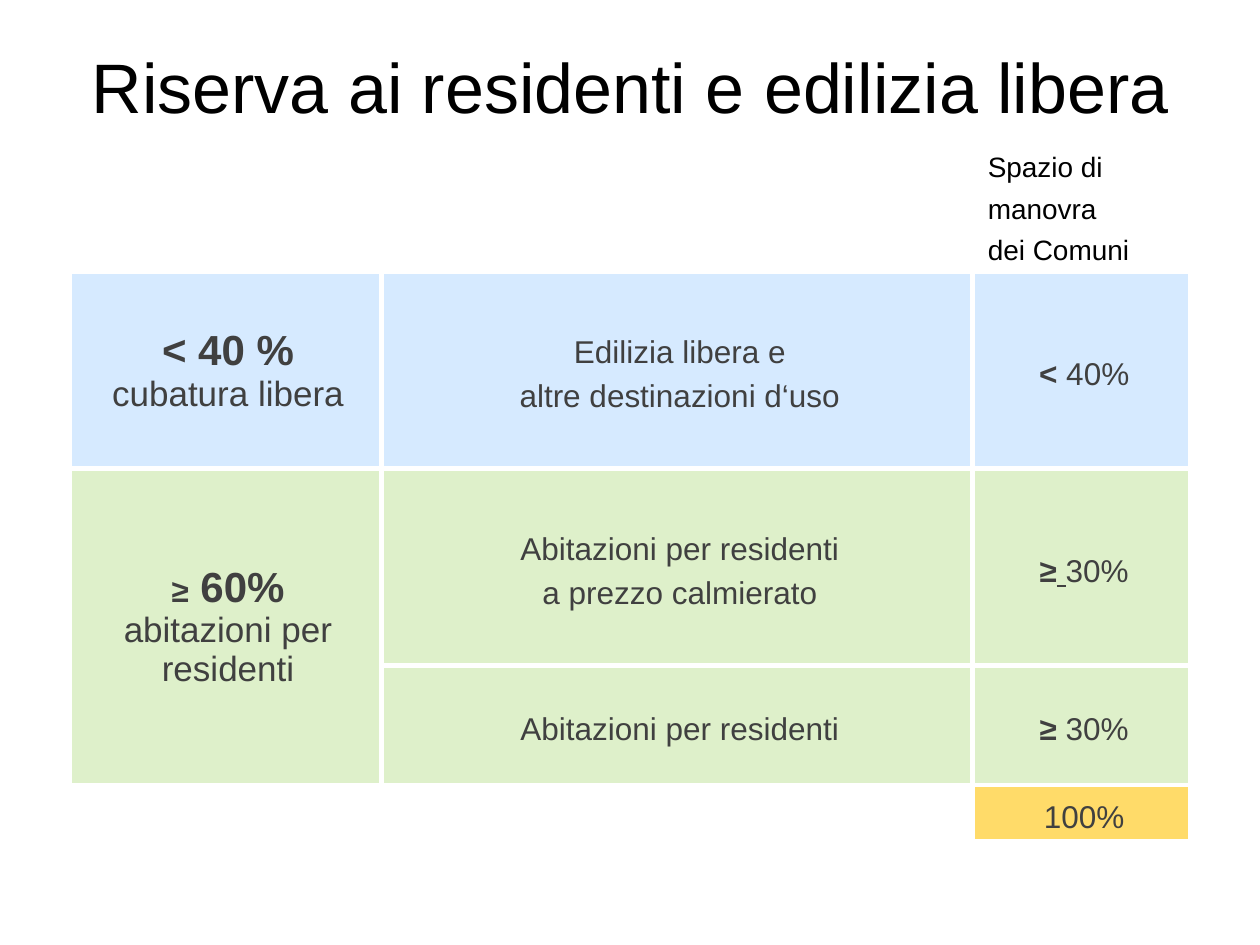
from dataclasses import dataclass
from itertools import product

from lxml.etree import SubElement
from pptx import Presentation
from pptx.dml.color import RGBColor
from pptx.enum.text import MSO_ANCHOR as Anchor, MSO_AUTO_SIZE as AutoSize, PP_ALIGN as Align
from pptx.oxml.ns import qn
from pptx.util import Inches, Pt


@dataclass(frozen=True)
class Theme:
    font: str = "Arial"
    black: str = "000000"
    grey: str = "404040"
    white: str = "FFFFFF"
    blue: tuple = ("99CCFF", 40)
    green: tuple = ("92D050", 30)
    clear: tuple = ("FFFFFF", 20)
    yellow: tuple = ("FFDB69", 100)
    title: int = 40
    share: int = 24
    label: int = 20
    cell: int = 18
    note: int = 16
    border: int = 3


THEME = Theme()
COLUMNS = (2.48, 4.69, 1.73)
ROWS = (1.56, 1.56, 0.95, 0.35)
TABLE_LEFT, TABLE_TOP = 0.55, 2.16

FILLS = (
    (THEME.blue,) * 3,
    (THEME.green,) * 3,
    (THEME.green,) * 3,
    (THEME.clear, THEME.clear, THEME.yellow),
)
SHARES = {
    (0, 0): [[("< 40 %", THEME.share, True)], [("cubatura libera", THEME.label, False)]],
    (1, 0): [
        [("≥", THEME.cell, True), (" 60%", THEME.share, True)],
        [("abitazioni per", THEME.label, False)],
        [("residenti", THEME.label, False)],
    ],
}
USES = {
    (0, 1): ["Edilizia libera e", "altre destinazioni d‘uso"],
    (1, 1): ["Abitazioni per residenti", "a prezzo calmierato"],
    (2, 1): ["Abitazioni per residenti"],
    (3, 2): ["100%"],
}
LIMITS = {
    (0, 2): [("< ", True, False), ("40%", False, False)],
    (1, 2): [("≥", True, False), (" ", True, True), ("30%", False, False)],
    (2, 2): [("≥", True, False), (" 30%", False, False)],
}


def add_text(paragraph, text, size=THEME.cell, color=THEME.grey, bold=False, underline=False):
    run = paragraph.add_run()
    run.text = text
    font = run.font
    font.name, font.size = THEME.font, Pt(size)
    font.bold, font.underline = bold, underline
    font.color.rgb = RGBColor.from_string(color)


def next_paragraph(frame, index, **settings):
    paragraph = frame.add_paragraph() if index else frame.paragraphs[0]
    for name, value in settings.items():
        setattr(paragraph, name, value)
    return paragraph


def place(shape, left, top, width, height):
    shape.left, shape.top = Inches(left), Inches(top)
    shape.width, shape.height = Inches(width), Inches(height)
    shape.text_frame.auto_size = AutoSize.NONE
    shape.text_frame.word_wrap = True


def fill_title(shape):
    place(shape, 0.5, 0.05, 9, 1.25)
    frame = shape.text_frame
    frame.vertical_anchor = Anchor.MIDDLE
    paragraph = next_paragraph(frame, 0, alignment=Align.CENTER)
    add_text(paragraph, "Riserva ai residenti e edilizia libera", THEME.title, THEME.black)


def fill_note(shape):
    place(shape, 0.5, 1.07, 9, 5.63)
    frame = shape.text_frame
    frame.margin_left, frame.margin_top = Inches(7.34), Inches(0.12)
    for index, line in enumerate(("Spazio di", "manovra", "dei Comuni")):
        paragraph = next_paragraph(frame, index, space_before=Pt(4.5 if index else 0))
        properties = paragraph._p.get_or_add_pPr()
        properties.set("marL", "0")
        properties.set("indent", "0")
        SubElement(properties, qn("a:buNone"))
        add_text(paragraph, line, THEME.note, THEME.black)


def style_cell(cell, color, opacity):
    properties = cell._tc.get_or_add_tcPr()
    for side in "LRTB":
        line = SubElement(properties, qn(f"a:ln{side}"), w=str(Pt(THEME.border)))
        SubElement(SubElement(line, qn("a:solidFill")), qn("a:srgbClr"), val=THEME.white)
    cell.fill.solid()
    cell.fill.fore_color.rgb = RGBColor.from_string(color)
    if opacity < 100:
        tint = properties.find(qn("a:solidFill")).find(qn("a:srgbClr"))
        SubElement(tint, qn("a:alpha"), val=str(opacity * 1000))
    cell.vertical_anchor = Anchor.MIDDLE
    cell.margin_left, cell.margin_right = Inches(0.16), Inches(0.12)
    cell.margin_top = cell.margin_bottom = Inches(0.05)


def write_cell(cell, lines, spacing):
    for index, runs in enumerate(lines):
        paragraph = next_paragraph(
            cell.text_frame, index, alignment=Align.CENTER, line_spacing=spacing
        )
        for text, options in runs:
            add_text(paragraph, text, **options)


def add_quota_table(slide):
    frame = slide.shapes.add_table(
        len(ROWS), len(COLUMNS), Inches(TABLE_LEFT), Inches(TABLE_TOP),
        Inches(sum(COLUMNS)), Inches(sum(ROWS)),
    )
    table = frame.table
    table.first_row = table.horz_banding = False
    for column, width in zip(table.columns, COLUMNS):
        column.width = Inches(width)
    for row, height in zip(table.rows, ROWS):
        row.height = Inches(height)
    for row, column in product(range(len(ROWS)), range(len(COLUMNS))):
        style_cell(table.cell(row, column), *FILLS[row][column])
    table.cell(1, 0).merge(table.cell(2, 0))

    for position, lines in SHARES.items():
        content = [[(text, dict(size=size, bold=bold)) for text, size, bold in runs]
                   for runs in lines]
        write_cell(table.cell(*position), content, 1.0)
    for position, lines in USES.items():
        write_cell(table.cell(*position), [[(line, {})] for line in lines], 1.25)
    for position, runs in LIMITS.items():
        content = [(text, dict(bold=bold, underline=underline)) for text, bold, underline in runs]
        write_cell(table.cell(*position), [content], 1.25)


def main():
    presentation = Presentation()
    presentation.slide_width, presentation.slide_height = Inches(10), Inches(7.5)
    slide = presentation.slides.add_slide(presentation.slide_layouts[1])
    fill_title(slide.shapes.title)
    fill_note(slide.placeholders[1])
    add_quota_table(slide)
    presentation.save("out.pptx")


if __name__ == "__main__":
    main()
